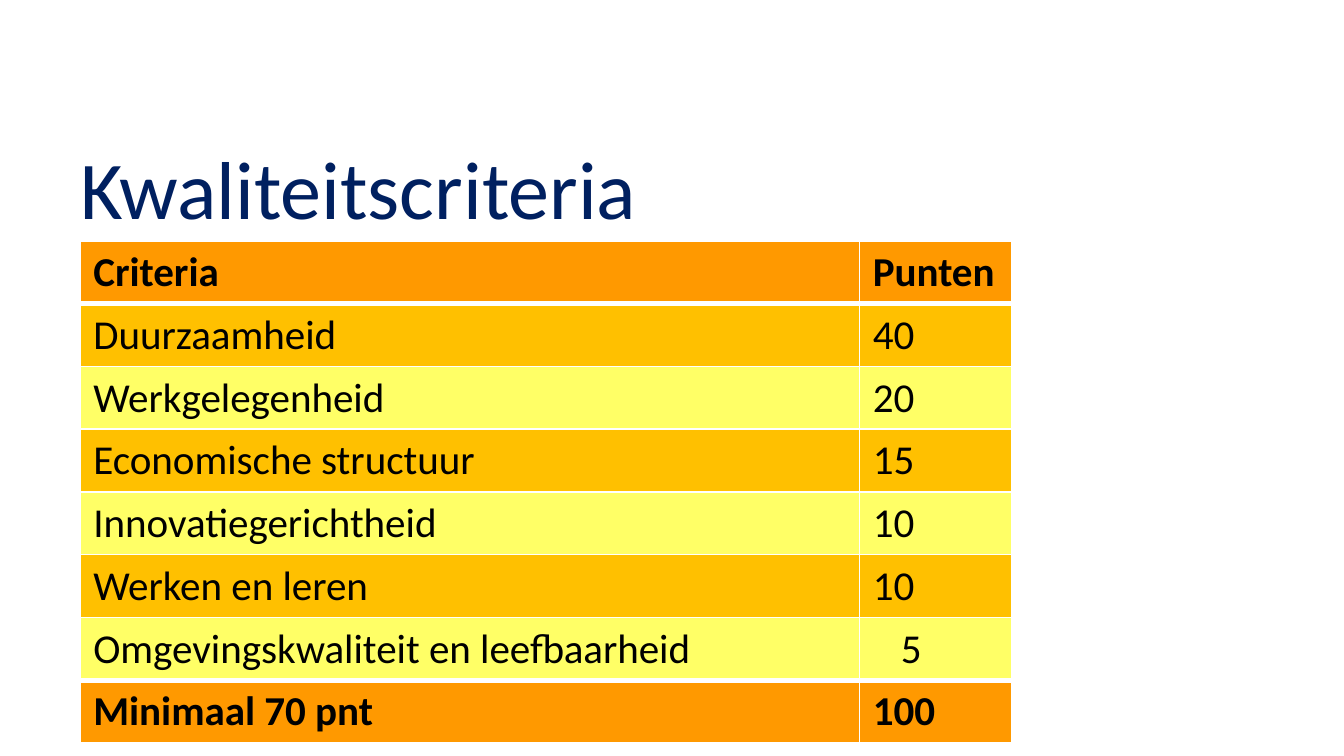
from lxml.etree import SubElement
from pptx import Presentation
from pptx.dml.color import RGBColor
from pptx.enum.text import MSO_ANCHOR
from pptx.oxml.ns import qn
from pptx.util import Pt

COLORS = {
    "title": "002060",
    "text": "000000",
    "accent": "FF9900",
    "dark_band": "FFC000",
    "light_band": "FFFF66",
    "border": "FFFFFF",
}
CRITERIA = [
    ("Criteria", "Punten"),
    ("Duurzaamheid", "40"),
    ("Werkgelegenheid", "20"),
    ("Economische structuur", "15"),
    ("Innovatiegerichtheid", "10"),
    ("Werken en leren", "10"),
    ("Omgevingskwaliteit en leefbaarheid", "5"),
    ("Minimaal 70 pnt", "100"),
]
COLUMN_WIDTHS = [417.6, 81.4]
ROW_HEIGHT = 33.6
SINGLE_DIGIT_INDENT = 15


def write(frame, text, size=22, color="text", bold=False):
    para = frame.paragraphs[0]
    span = para.add_run()
    span.text = text
    span.font.name = "Calibri"
    span.font.size = Pt(size)
    span.font.bold = bold
    span.font.color.rgb = RGBColor.from_string(COLORS[color])


def add_borders(cell, top, bottom):
    """Draw all four cell borders; top and bottom are widths in points."""
    properties = cell._tc.get_or_add_tcPr()
    for side, width in (("L", 1), ("R", 1), ("T", top), ("B", bottom)):
        line = SubElement(properties, qn(f"a:ln{side}"), w=str(Pt(width)))
        fill = SubElement(line, qn("a:solidFill"))
        SubElement(fill, qn("a:srgbClr"), val=COLORS["border"])


deck = Presentation()
deck.slide_width, deck.slide_height = Pt(720), Pt(405)
page = deck.slides.add_slide(deck.slide_layouts[6])

title_box = page.shapes.add_textbox(Pt(36), Pt(66.2), Pt(648), Pt(67.7))
title_box.text_frame.word_wrap = True
title_box.text_frame.vertical_anchor = MSO_ANCHOR.MIDDLE
write(title_box.text_frame, "Kwaliteitscriteria", size=44, color="title")

table = page.shapes.add_table(
    len(CRITERIA), len(COLUMN_WIDTHS), Pt(42.8), Pt(129),
    Pt(sum(COLUMN_WIDTHS)), Pt(ROW_HEIGHT * len(CRITERIA)),
).table
for column, width in zip(table.columns, COLUMN_WIDTHS):
    column.width = Pt(width)

last = len(CRITERIA) - 1
for row, texts in enumerate(CRITERIA):
    table.rows[row].height = Pt(ROW_HEIGHT)
    emphasized = row in (0, last)
    if emphasized:
        band = "accent"
    else:
        band = "dark_band" if row % 2 else "light_band"
    for column, text in enumerate(texts):
        cell = table.cell(row, column)
        add_borders(
            cell,
            top=3 if row in (1, last) else 1,
            bottom=3 if row in (0, last - 1) else 1,
        )
        cell.fill.solid()
        cell.fill.fore_color.rgb = RGBColor.from_string(COLORS[band])
        if len(text) == 1:
            cell.margin_left = Pt(7.2 + SINGLE_DIGIT_INDENT)
        write(cell.text_frame, text, bold=emphasized)

deck.save("out.pptx")
